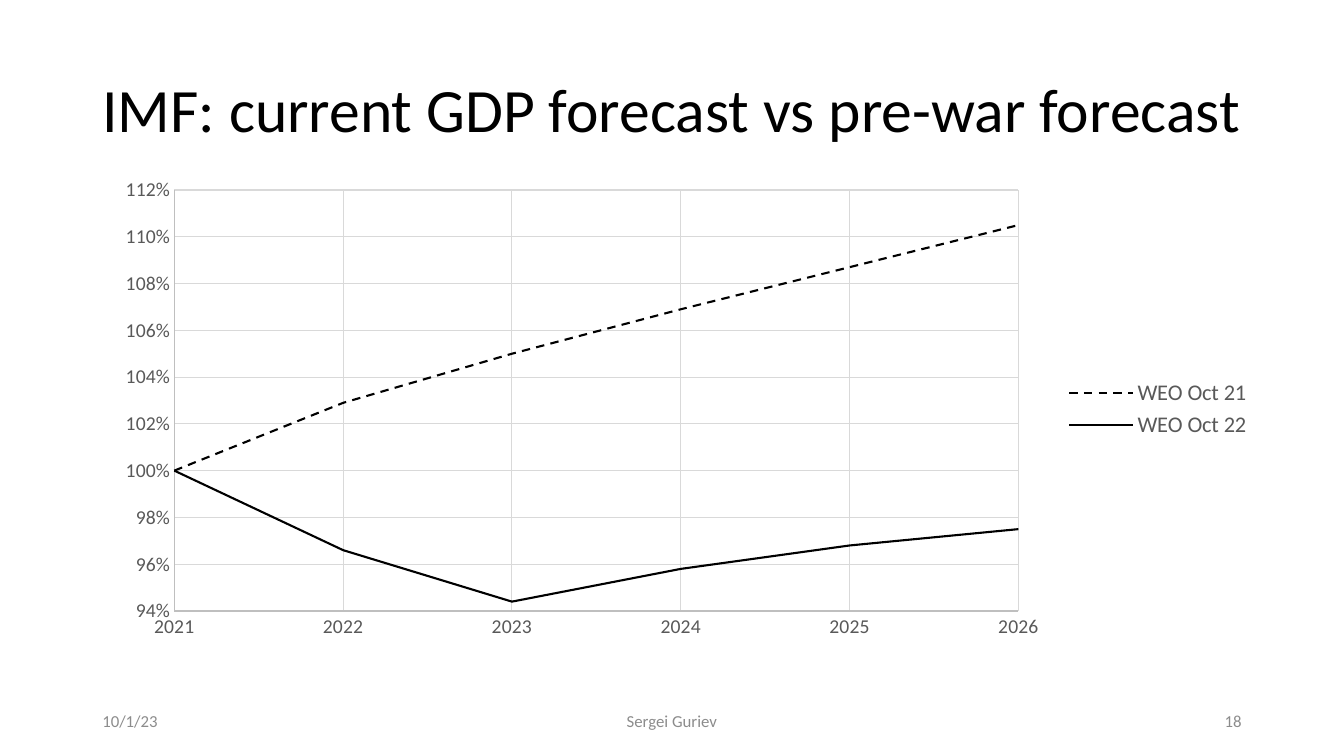
from dataclasses import dataclass

from lxml.etree import SubElement
from pptx import Presentation
from pptx.chart.data import XyChartData
from pptx.dml.color import RGBColor
from pptx.enum.chart import XL_CHART_TYPE, XL_LEGEND_POSITION, XL_TICK_MARK
from pptx.enum.dml import MSO_LINE
from pptx.enum.text import MSO_ANCHOR, PP_ALIGN
from pptx.oxml.ns import qn
from pptx.util import Pt

TITLE = "IMF: current GDP forecast vs pre-war forecast"
TITLE_BOX = (88, 38, 1104, 139)
FOOTERS = [
    ("10/1/23", 88, 288, PP_ALIGN.LEFT),
    ("Sergei Guriev", 424, 432, PP_ALIGN.CENTER),
    ("18", 904, 288, PP_ALIGN.RIGHT),
]
FOOTER_TOP, FOOTER_HEIGHT = 667, 38

YEARS = range(2021, 2027)
FORECASTS = [
    ("WEO Oct 21", (1, 1.029, 1.05, 1.069, 1.087, 1.105), MSO_LINE.DASH),
    ("WEO Oct 22", (1, 0.966, 0.944, 0.958, 0.968, 0.975), MSO_LINE.SOLID),
]
CHART_BOX = (98, 161, 1104, 457)
PLOT_BOX = (68, 20, 804, 401)
SLIDE_SIZE = (1280, 720)
EMU_PER_PX = 9525


@dataclass(frozen=True)
class Theme:
    font: str = "Calibri"
    ink: str = "000000"
    label: str = "595959"
    footer: str = "8C8C8C"
    axis: str = "BFBFBF"
    grid: str = "D9D9D9"
    title_size: int = 44
    legend_size: int = 16
    axis_size: int = 14
    footer_size: int = 12
    chart_size: int = 10
    series_width: float = 1.5
    axis_width: float = 0.75


THEME = Theme()


def px(*lengths):
    return [length * EMU_PER_PX for length in lengths]


def style_font(font, size, color):
    font.name = THEME.font
    font.size = Pt(size)
    font.color.rgb = RGBColor.from_string(color)


def style_line(line, width, color):
    line.width = Pt(width)
    line.color.rgb = RGBColor.from_string(color)


def add_text(page, text, bounds, size, color, align=PP_ALIGN.LEFT, spacing=1.0):
    frame = page.shapes.add_textbox(*px(*bounds)).text_frame
    frame.word_wrap = True
    frame.vertical_anchor = MSO_ANCHOR.MIDDLE
    para = frame.paragraphs[0]
    para.text = text
    para.alignment = align
    para.line_spacing = spacing
    style_font(para.runs[0].font, size, color)


def style_axis(axis, low, high, step, number_format):
    axis.minimum_scale, axis.maximum_scale, axis.major_unit = low, high, step
    axis.major_tick_mark = axis.minor_tick_mark = XL_TICK_MARK.NONE
    axis.has_major_gridlines = True
    style_line(axis.major_gridlines.format.line, THEME.axis_width, THEME.grid)
    style_line(axis.format.line, THEME.axis_width, THEME.axis)
    axis.tick_labels.number_format = number_format
    axis.tick_labels.number_format_is_linked = False
    style_font(axis.tick_labels.font, THEME.axis_size, THEME.label)


def place_plot(chart):
    area = chart.plots[0]._element.getparent()
    for old in area.findall(qn("c:layout")):
        area.remove(old)
    layout = SubElement(area, qn("c:layout"))
    area.insert(0, layout)
    manual = SubElement(layout, qn("c:manualLayout"))
    left, top, width, height = PLOT_BOX
    chart_width, chart_height = CHART_BOX[2:]
    settings = [
        ("layoutTarget", "inner"), ("xMode", "edge"), ("yMode", "edge"),
        ("x", left / chart_width), ("y", top / chart_height),
        ("w", width / chart_width), ("h", height / chart_height),
    ]
    for name, value in settings:
        SubElement(manual, qn(f"c:{name}")).set("val", str(value))


def add_forecast_chart(page):
    data = XyChartData(number_format="0%")
    for name, values, _ in FORECASTS:
        series = data.add_series(name)
        for year, value in zip(YEARS, values):
            series.add_data_point(year, value)
    chart = page.shapes.add_chart(
        XL_CHART_TYPE.XY_SCATTER_LINES_NO_MARKERS, *px(*CHART_BOX), data
    ).chart
    style_font(chart.font, THEME.chart_size, THEME.ink)
    chart.has_title = False
    chart.has_legend = True
    chart.legend.position = XL_LEGEND_POSITION.RIGHT
    chart.legend.include_in_layout = False
    style_font(chart.legend.font, THEME.legend_size, THEME.label)
    style_axis(chart.category_axis, YEARS[0], YEARS[-1], 1, "General")
    style_axis(chart.value_axis, 0.94, 1.12, 0.02, "0%")
    plot = chart.plots[0]
    plot.vary_by_categories = False
    for series, (_, _, dash) in zip(plot.series, FORECASTS):
        series.smooth = False
        style_line(series.format.line, THEME.series_width, THEME.ink)
        series.format.line.dash_style = dash
    place_plot(chart)


def main():
    deck = Presentation()
    deck.slide_width, deck.slide_height = px(*SLIDE_SIZE)
    page = deck.slides.add_slide(deck.slide_layouts[6])
    add_text(page, TITLE, TITLE_BOX, THEME.title_size, THEME.ink, spacing=0.9)
    for text, left, width, align in FOOTERS:
        bounds = (left, FOOTER_TOP, width, FOOTER_HEIGHT)
        add_text(page, text, bounds, THEME.footer_size, THEME.footer, align)
    add_forecast_chart(page)
    deck.save("out.pptx")


if __name__ == "__main__":
    main()
